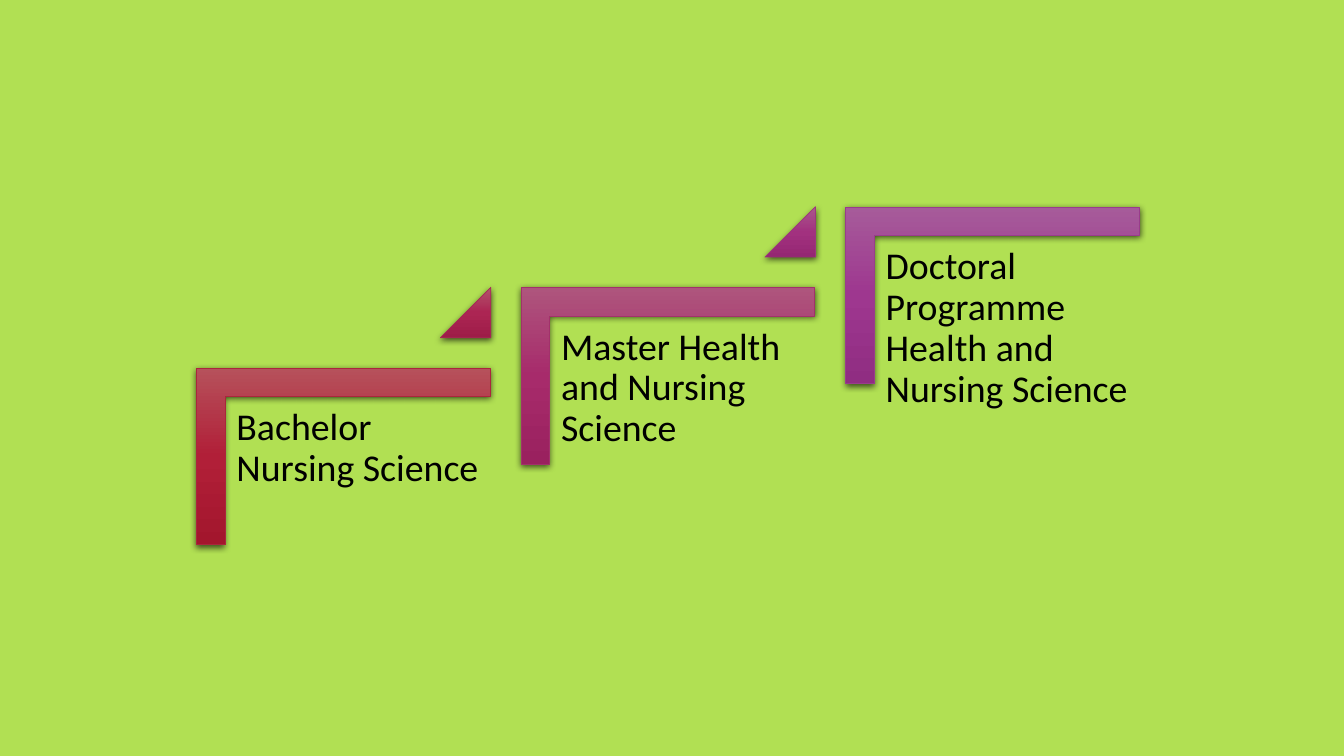
from copy import deepcopy

from lxml import etree
from pptx import Presentation
from pptx.dml.color import RGBColor
from pptx.enum.shapes import MSO_SHAPE
from pptx.enum.text import MSO_ANCHOR, PP_ALIGN
from pptx.oxml.ns import qn
from pptx.util import Cm, Pt

CORNER, TRIANGLE = MSO_SHAPE.CORNER, MSO_SHAPE.ISOSCELES_TRIANGLE
TOP, LEFT = MSO_ANCHOR.TOP, PP_ALIGN.LEFT
STEP_X, STEP_Y = 8.18, -2.03

# label, corner colours, arrow colours (three gradient stops, then the line)
STEPS = [
    ("Bachelor Nursing Science",
     ("B6515B", "B11F38", "A3162D", "AA263C"),
     ("B2536C", "AC2553", "9E1C48", "A62B55")),
    ("Master Health and Nursing Science",
     ("AE557D", "A72B6B", "9A215F", "A2316B"),
     ("AA588C", "A2317F", "952773", "9D367D")),
    ("Doctoral Programme Health and Nursing Science",
     ("A65B9A", "9E378F", "902D82", "993C8C"),
     None),
]


def rgb(value):
    return RGBColor.from_string(value)


def style(sp, colours):
    """Give a shape a downward three-stop gradient, a thin line and a soft shadow."""
    sp.fill.gradient()
    sp.fill.gradient_angle = 270
    grad = sp._element.spPr.find(qn("a:gradFill"))
    grad.set("rotWithShape", "0")
    stop_list = grad.find(qn("a:gsLst"))
    stop_list.append(deepcopy(stop_list[0]))
    for i, stop in enumerate(sp.fill.gradient_stops):
        stop.position = i / 2
        stop.color.rgb = rgb(colours[i])
    sp.line.color.rgb = rgb(colours[3])
    sp.line.width = Pt(0.5)

    sp.shadow.inherit = False
    effects = sp._element.spPr.find(qn("a:effectLst"))
    shadow = etree.SubElement(effects, qn("a:outerShdw"), blurRad=str(Pt(4.5)),
                              dist=str(Pt(1.5)), dir="5400000", algn="ctr",
                              rotWithShape="0")
    black = etree.SubElement(shadow, qn("a:srgbClr"), val="000000")
    etree.SubElement(black, qn("a:alpha"), val="63000")


prs = Presentation()
prs.slide_width, prs.slide_height = Cm(33.87), Cm(19.05)
s = prs.slides.add_slide(prs.slide_layouts[6])
s.background.fill.solid()
s.background.fill.fore_color.rgb = rgb("B1E053")

for i, (label, corner_colours, arrow_colours) in enumerate(STEPS):
    dx, dy = i * STEP_X, i * STEP_Y

    corner = s.shapes.add_shape(CORNER, Cm(6.43 + dx), Cm(7.8 + dy), Cm(4.45), Cm(7.4))
    corner.rotation = 90
    corner.adjustments[0] = corner.adjustments[1] = 0.161
    style(corner, corner_colours)

    box = s.shapes.add_textbox(Cm(5.69 + dx), Cm(10.01 + dy), Cm(6.68), Cm(5.87))
    tf = box.text_frame
    tf.word_wrap = True
    tf.vertical_anchor = TOP
    tf.margin_left = tf.margin_right = tf.margin_top = tf.margin_bottom = Cm(0.27)
    tf.text = label
    p = tf.paragraphs[0]
    p.alignment = LEFT
    p.line_spacing = 0.9
    r = p.runs[0]
    r.font.name = "Calibri"
    r.font.size = Pt(27)
    r.font.color.rgb = rgb("000000")

    if arrow_colours:
        arrow = s.shapes.add_shape(TRIANGLE, Cm(11.1 + dx), Cm(7.24 + dy), Cm(1.27), Cm(1.27))
        arrow.adjustments[0] = 1
        style(arrow, arrow_colours)

prs.save("out.pptx")
